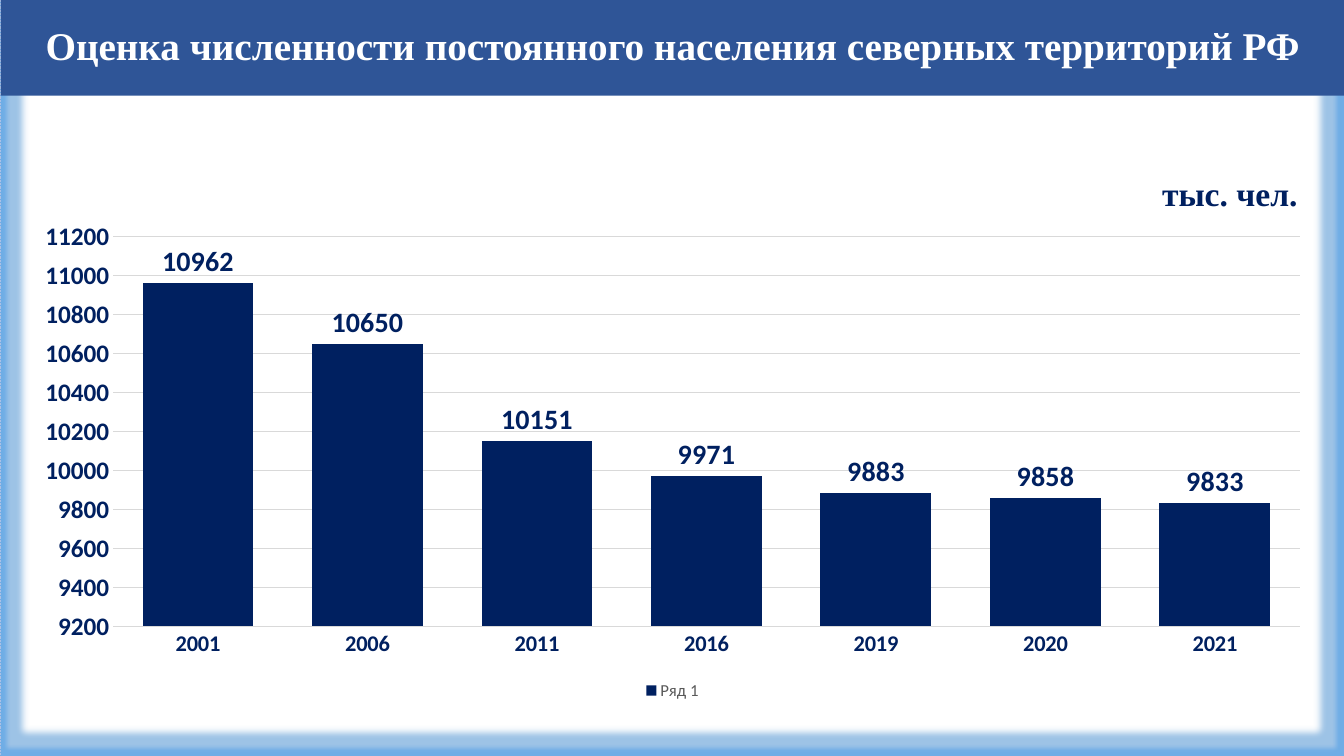
from pptx import Presentation
from pptx.chart.data import CategoryChartData
from pptx.dml.color import RGBColor
from pptx.enum.chart import (XL_CHART_TYPE, XL_LABEL_POSITION,
                             XL_LEGEND_POSITION, XL_TICK_MARK)
from pptx.enum.dml import MSO_LINE
from pptx.enum.shapes import MSO_SHAPE
from pptx.enum.text import MSO_ANCHOR, MSO_AUTO_SIZE, PP_ALIGN
from pptx.oxml import parse_xml
from pptx.oxml.ns import nsdecls
from pptx.util import Inches, Pt

COLUMN = XL_CHART_TYPE.COLUMN_CLUSTERED
OUTSIDE = XL_LABEL_POSITION.OUTSIDE_END
BOTTOM = XL_LEGEND_POSITION.BOTTOM
NO_TICK = XL_TICK_MARK.NONE
DOTTED = MSO_LINE.ROUND_DOT
RECT = MSO_SHAPE.RECTANGLE
MIDDLE = MSO_ANCHOR.MIDDLE
NO_FIT = MSO_AUTO_SIZE.NONE
CENTER = PP_ALIGN.CENTER

NAVY = RGBColor(0x00, 0x20, 0x60)
BLUE = RGBColor(0x2F, 0x55, 0x97)
SKY = RGBColor(0x6F, 0xAD, 0xE6)
PALE = RGBColor(0x9D, 0xC3, 0xE6)
EDGE = RGBColor(0xAB, 0xC0, 0xE4)
GRID = RGBColor(0xD9, 0xD9, 0xD9)
GRAY = RGBColor(0x59, 0x59, 0x59)
WHITE = RGBColor(0xFF, 0xFF, 0xFF)

WIDTH, HEIGHT = 13.33, 7.5
YEARS = ["2001", "2006", "2011", "2016", "2019", "2020", "2021"]
PEOPLE = [10962, 10650, 10151, 9971, 9883, 9858, 9833]


class Deck:
    sans = "Calibri"
    serif = "Times New Roman"

    def __init__(self):
        self.prs = Presentation()
        self.prs.slide_width = Inches(WIDTH)
        self.prs.slide_height = Inches(HEIGHT)
        self.slide = self.prs.slides.add_slide(self.prs.slide_layouts[5])

    def style(self, font, size, color, bold=True, name=sans):
        font.size, font.bold, font.name = Pt(size), bold, name
        font.color.rgb = color

    def panel(self, inset, color, soft=0):
        """Add a full-slide rectangle, inset and softened at its edges."""
        box = self.slide.shapes.add_shape(
            RECT, Inches(inset), Inches(inset),
            Inches(WIDTH - 2 * inset), Inches(HEIGHT - 2 * inset))
        box.shadow.inherit = False
        box.fill.solid()
        box.fill.fore_color.rgb = color
        if soft:
            box.line.fill.background()
            effects = box.shadow._element.find(".//{*}effectLst")
            effects.append(parse_xml(
                f'<a:softEdge {nsdecls("a")} rad="{Pt(soft)}"/>'))
        else:
            box.line.color.rgb = EDGE
            box.line.width = Pt(0.5)
            box.line.dash_style = DOTTED

    def title(self, text):
        head = self.slide.shapes.title
        head.left, head.top = Inches(0.01), Inches(0)
        head.width, head.height = Inches(13.32), Inches(0.95)
        head.fill.solid()
        head.fill.fore_color.rgb = BLUE
        frame = head.text_frame
        frame.text = text
        frame.auto_size = NO_FIT
        frame.word_wrap = True
        frame.vertical_anchor = MIDDLE
        line = frame.paragraphs[0]
        line.alignment, line.line_spacing = CENTER, 0.9
        self.style(line.runs[0].font, 28, WHITE, name=self.serif)
        tree = head._element.getparent()
        tree.append(head._element)  # bring to front

    def place(self, part, inner=False, **spots):
        """Give a chart part a manual layout in fractions of the chart."""
        for old in part.findall("{*}layout"):
            part.remove(old)
        target = '<c:layoutTarget val="inner"/>' if inner else ""
        modes = "".join(f'<c:{key}Mode val="edge"/>' for key in "xy")
        sizes = "".join(f'<c:{key} val="{val}"/>' for key, val in spots.items())
        layout = parse_xml(
            f'<c:layout {nsdecls("c")}><c:manualLayout>{target}{modes}{sizes}'
            '</c:manualLayout></c:layout>')
        part.insert(0 if inner else 1, layout)

    def axis(self, axis, size):
        axis.major_tick_mark = axis.minor_tick_mark = NO_TICK
        self.style(axis.tick_labels.font, size, NAVY)

    def chart(self, name, unit):
        data = CategoryChartData()
        data.categories = YEARS
        data.add_series(name, PEOPLE)
        chart = self.slide.shapes.add_chart(
            COLUMN, Inches(0.19), Inches(1.36),
            Inches(12.96), Inches(5.63), data).chart
        chart.font.name, chart.font.size = self.sans, Pt(10)

        frame = chart.chart_title.text_frame
        frame.text = unit
        self.style(frame.paragraphs[0].runs[0].font, 24, NAVY, name=self.serif)
        self.place(chart.chart_title._element, x=0.87, y=0.05)
        plot = chart.plots[0]
        self.place(plot._element.getparent(), inner=True,
                   x=0.072, y=0.176, w=0.908, h=0.686)

        plot.gap_width, plot.overlap = 53, 100
        plot.vary_by_categories = False
        bars = plot.series[0]
        bars.format.fill.solid()
        bars.format.fill.fore_color.rgb = NAVY
        labels = bars.data_labels
        labels.show_value, labels.position = True, OUTSIDE
        self.style(labels.font, 20, NAVY)

        years, scale = chart.category_axis, chart.value_axis
        self.axis(years, 16)
        self.axis(scale, 18)
        scale.minimum_scale, scale.maximum_scale = 9200, 11200
        scale.major_unit = 200
        scale.format.line.fill.background()
        for line in (years.format.line, scale.major_gridlines.format.line):
            line.color.rgb, line.width = GRID, Pt(0.75)

        chart.has_legend = True
        chart.legend.position = BOTTOM
        chart.legend.include_in_layout = False
        self.style(chart.legend.font, 12, GRAY, bold=False)


def main():
    deck = Deck()
    deck.panel(0, SKY)
    deck.panel(0.02, PALE, 4)
    deck.panel(0.14, WHITE, 5)
    deck.chart("Ряд 1", "тыс. чел.")
    deck.title("Оценка численности постоянного населения северных территорий РФ")
    deck.prs.save("out.pptx")


if __name__ == "__main__":
    main()
